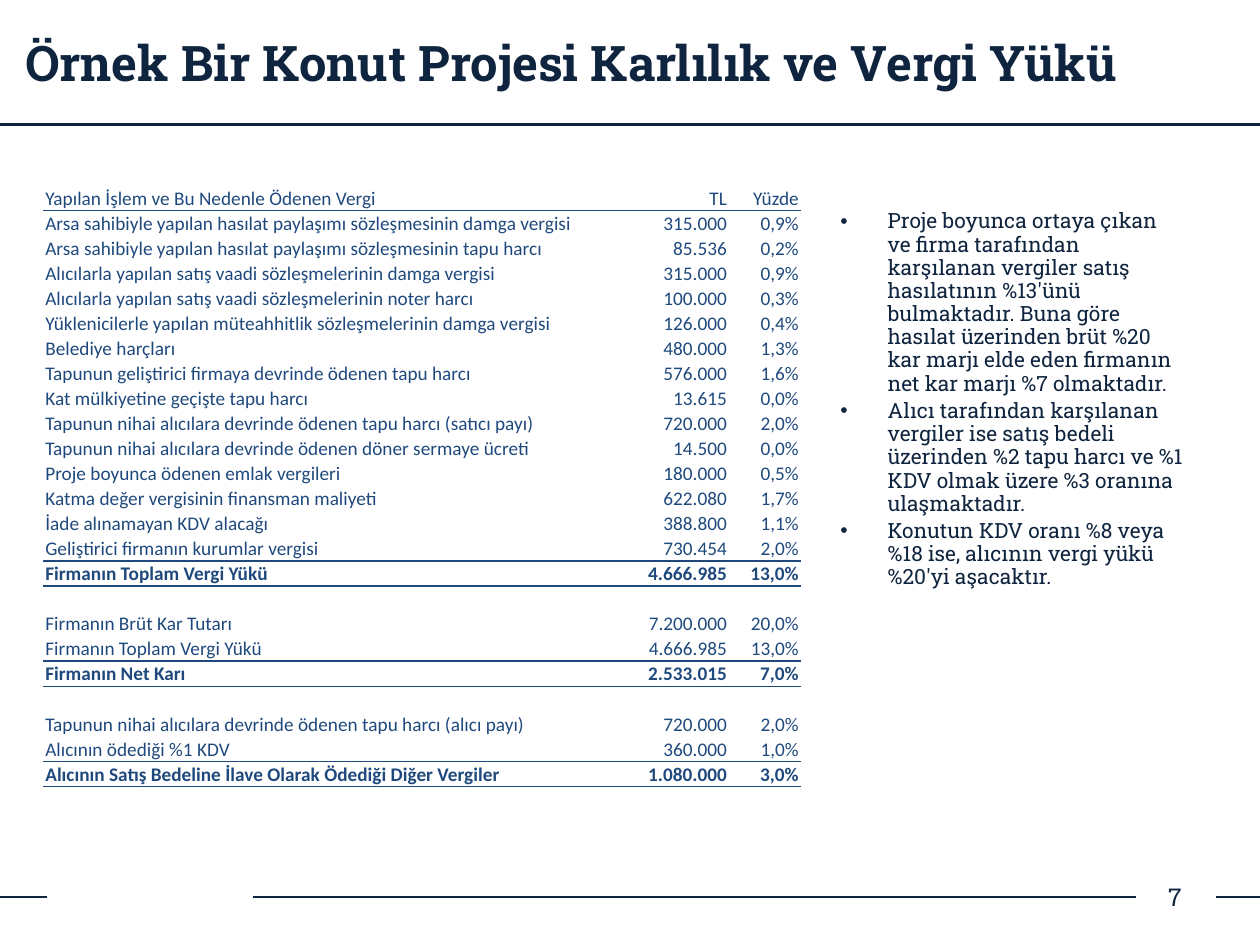
from lxml import etree
from pptx import Presentation, util as u
from pptx.dml.color import RGBColor
from pptx.enum import shapes, text
from pptx.oxml import ns

COLORS = {"navy": "0F243E", "blue": "1F497D"}
COLUMNS, ROWS = 100, 75
TITLE = "Örnek Bir Konut Projesi Karlılık ve Vergi Yükü"
NOTES = [
    "Proje boyunca ortaya çıkan ve firma tarafından karşılanan vergiler satış hasılatının %13'ünü "
    "bulmaktadır. Buna göre hasılat üzerinden brüt %20 kar marjı elde eden firmanın net kar marjı "
    "%7 olmaktadır.",
    "Alıcı tarafından karşılanan vergiler ise satış bedeli üzerinden %2 tapu harcı ve %1 KDV olmak "
    "üzere %3 oranına ulaşmaktadır.",
    "Konutun KDV oranı %8 veya %18 ise, alıcının vergi yükü %20'yi aşacaktır.",
]
BLANK = ("", "", "")
TAXES = [
    ("Yapılan İşlem ve Bu Nedenle Ödenen Vergi", "TL", "Yüzde"),
    ("Arsa sahibiyle yapılan hasılat paylaşımı sözleşmesinin damga vergisi", "315.000", "0,9%"),
    ("Arsa sahibiyle yapılan hasılat paylaşımı sözleşmesinin tapu harcı", "85.536", "0,2%"),
    ("Alıcılarla yapılan satış vaadi sözleşmelerinin damga vergisi", "315.000", "0,9%"),
    ("Alıcılarla yapılan satış vaadi sözleşmelerinin noter harcı", "100.000", "0,3%"),
    ("Yüklenicilerle yapılan müteahhitlik sözleşmelerinin damga vergisi", "126.000", "0,4%"),
    ("Belediye harçları", "480.000", "1,3%"),
    ("Tapunun geliştirici firmaya devrinde ödenen tapu harcı", "576.000", "1,6%"),
    ("Kat mülkiyetine geçişte tapu harcı", "13.615", "0,0%"),
    ("Tapunun nihai alıcılara devrinde ödenen tapu harcı (satıcı payı)", "720.000", "2,0%"),
    ("Tapunun nihai alıcılara devrinde ödenen döner sermaye ücreti", "14.500", "0,0%"),
    ("Proje boyunca ödenen emlak vergileri", "180.000", "0,5%"),
    ("Katma değer vergisinin finansman maliyeti", "622.080", "1,7%"),
    ("İade alınamayan KDV alacağı", "388.800", "1,1%"),
    ("Geliştirici firmanın kurumlar vergisi", "730.454", "2,0%"),
    ("Firmanın Toplam Vergi Yükü", "4.666.985", "13,0%"),
    BLANK,
    ("Firmanın Brüt Kar Tutarı", "7.200.000", "20,0%"),
    ("Firmanın Toplam Vergi Yükü", "4.666.985", "13,0%"),
    ("Firmanın Net Karı", "2.533.015", "7,0%"),
    BLANK,
    ("Tapunun nihai alıcılara devrinde ödenen tapu harcı (alıcı payı)", "720.000", "2,0%"),
    ("Alıcının ödediği %1 KDV", "360.000", "1,0%"),
    ("Alıcının Satış Bedeline İlave Olarak Ödediği Diğer Vergiler", "1.080.000", "3,0%"),
]
TOTAL_ROWS = {15, 19, 23}
RULED_ROWS = {0} | TOTAL_ROWS | {row - 1 for row in TOTAL_ROWS}


class SlideWriter:
    heading_font = "Roboto Slab"
    table_font = "Calibri"

    def __init__(self, deck):
        self.deck = deck
        self.page = deck.slides.add_slide(deck.slide_layouts[1])

    def x(self, columns):
        return round(self.deck.slide_width * columns / COLUMNS)

    def y(self, rows):
        return round(self.deck.slide_height * rows / ROWS)

    def place(self, box, left, top, width, height):
        box.left, box.top = self.x(left), self.y(top)
        box.width, box.height = self.x(width), self.y(height)

    def style(self, para, size, name=heading_font, color="navy", bold=False):
        font = para.font
        font.size, font.name, font.bold = u.Pt(size), name, bold
        font.color.rgb = RGBColor.from_string(COLORS[color])

    def line(self, start, end, width=1.5):
        rule = self.page.shapes.add_connector(
            shapes.MSO_CONNECTOR.STRAIGHT,
            self.x(start[0]), self.y(start[1]), self.x(end[0]), self.y(end[1]))
        rule.line.width = u.Pt(width)
        rule.line.color.rgb = RGBColor.from_string(COLORS["navy"])
        etree.SubElement(rule._element.spPr, ns.qn("a:effectLst"))

    def title(self, words, *area):
        box = self.page.shapes.title
        self.place(box, *area)
        frame = box.text_frame
        frame.text = words
        frame.margin_left = self.x(2)
        frame.vertical_anchor = text.MSO_ANCHOR.MIDDLE
        para = frame.paragraphs[0]
        para.alignment = text.PP_ALIGN.LEFT
        self.style(para, 28, bold=True)

    def bullets(self, items, *area):
        box = self.page.placeholders[1]
        self.place(box, *area)
        frame = box.text_frame
        for index, item in enumerate(items):
            para = frame.paragraphs[0] if index == 0 else frame.add_paragraph()
            para.text = item
            para.line_spacing = 0.92
            para.space_before = u.Pt(2.4 if index else 0)
            props = para._p.get_or_add_pPr()
            props.set("marL", str(self.x(3.75)))
            props.set("indent", str(-self.x(3.75)))
            etree.SubElement(props, ns.qn("a:buFont")).set("typeface", "Arial")
            etree.SubElement(props, ns.qn("a:buChar")).set("char", "•")
            self.style(para, 12)

    def label(self, words, *area):
        box = self.page.shapes.add_textbox(0, 0, 0, 0)
        self.place(box, *area)
        frame = box.text_frame
        frame.word_wrap = True
        frame.vertical_anchor = text.MSO_ANCHOR.MIDDLE
        frame.text = words
        frame.paragraphs[0].alignment = text.PP_ALIGN.CENTER
        self.style(frame.paragraphs[0], 14)

    def border(self, cell, side):
        edge = etree.SubElement(cell._tc.get_or_add_tcPr(), ns.qn(f"a:{side}"), w=str(u.Pt(1)))
        fill = etree.SubElement(edge, ns.qn("a:solidFill"))
        etree.SubElement(fill, ns.qn("a:srgbClr"), val=COLORS["blue"])

    def table(self, rows, widths, left, top, height):
        table = self.page.shapes.add_table(
            len(rows), len(widths), self.x(left), self.y(top),
            self.x(sum(widths)), self.y(height)).table
        table.first_row = table.horz_banding = False
        for column, width in zip(table.columns, widths):
            column.width = self.x(width)
        for row, values in enumerate(rows):
            for column, value in enumerate(values):
                cell = table.cell(row, column)
                cell.margin_left = cell.margin_right = cell.margin_top = self.x(0.1)
                cell.margin_bottom = 0
                cell.vertical_anchor = text.MSO_ANCHOR.BOTTOM
                if row - 1 in RULED_ROWS:
                    self.border(cell, "lnT")
                if row in RULED_ROWS:
                    self.border(cell, "lnB")
                cell.fill.background()
                cell.text = value
                para = cell.text_frame.paragraphs[0]
                para.alignment = text.PP_ALIGN.RIGHT if column else text.PP_ALIGN.LEFT
                self.style(para, 11, self.table_font, "blue", row in TOTAL_ROWS)


def main():
    deck = Presentation()
    deck.slide_width, deck.slide_height = u.Inches(10), u.Inches(7.5)
    writer = SlideWriter(deck)
    for start, end in ((0, 3.7), (20.1, 90.2), (96.5, 100)):
        writer.line((start, 71.2), (end, 71.2))
    writer.line((0, 9.9), (100, 9.9), 2)
    writer.title(TITLE, 0, 0, 100, 9.9)
    writer.bullets(NOTES, 65.7, 16.2, 29.3, 50.8)
    writer.label("7", 90.9, 69.2, 4.7, 4)
    writer.table(TAXES, (44.1, 10.2, 5.7), 3.5, 14.7, 47.8)
    deck.save("out.pptx")


if __name__ == "__main__":
    main()
